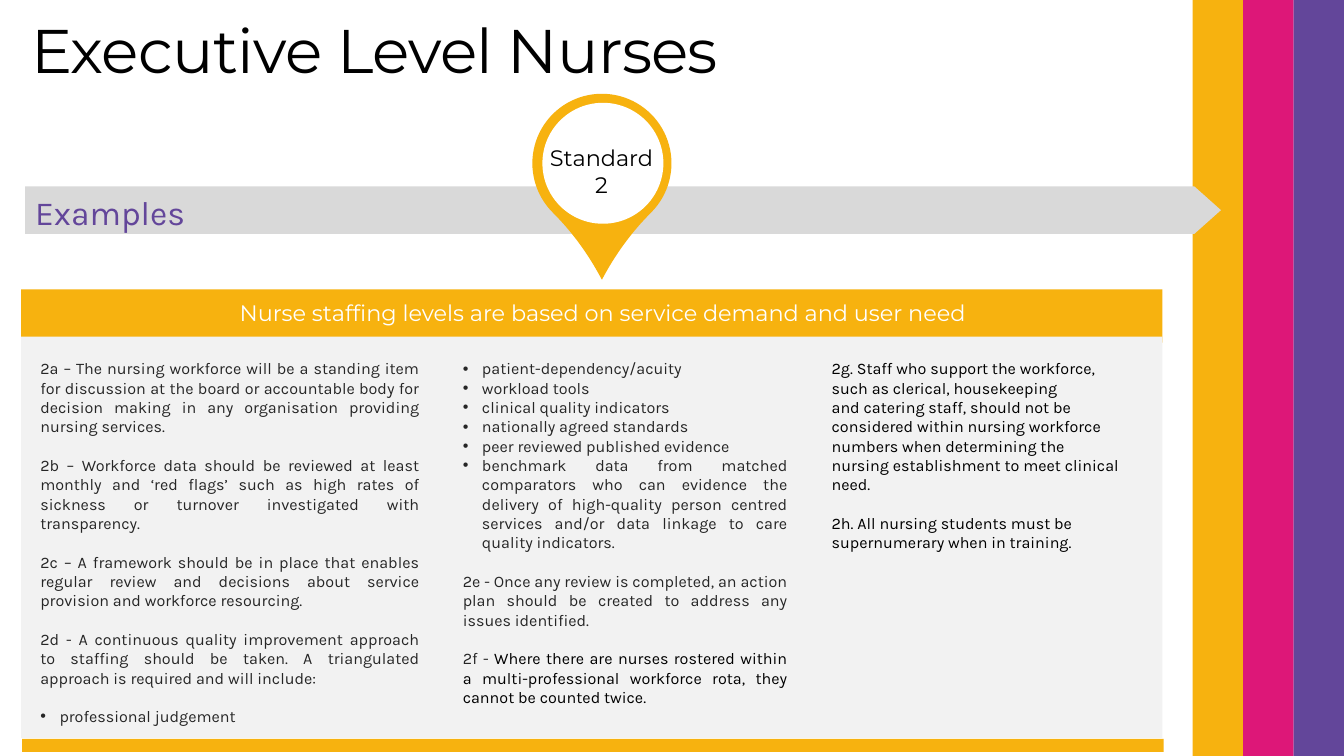
from pptx import Presentation
from pptx.dml.color import RGBColor
from pptx.enum.shapes import MSO_SHAPE as Preset
from pptx.enum.text import MSO_ANCHOR as Anchor, MSO_AUTO_SIZE as AutoSize, PP_ALIGN as Align
from pptx.oxml.ns import qn
from pptx.util import Inches, Pt
from lxml.etree import SubElement

COLORS = {
    "amber": "F7B20F", "pink": "DD1778", "purple": "63469A", "gray": "D9D9D9",
    "panel": "F2F2F2", "white": "FFFFFF", "black": "000000", "ink": "262626",
}
HEADING_FONT, BODY_FONT = "Montserrat", "Karla"
BODY_SIZE, BODY_GAP = 11.5, 13.8
BULLET = "• "

TITLE = "Executive Level Nurses"
SECTION = "Examples"
STANDARD = ["Standard", "2"]
BANNER = "Nurse staffing levels are based on service demand and user need"

REVIEWS = [
    "2a – The nursing workforce will be a standing item for discussion at the board or "
    "accountable body for decision making in any organisation providing nursing services.",
    "2b – Workforce data should be reviewed at least monthly and ‘red flags’ such as high "
    "rates of sickness or turnover investigated with transparency.",
    "2c – A framework should be in place that enables regular review and decisions about "
    "service provision and workforce resourcing.",
    "2d - A continuous quality improvement approach to staffing should be taken. "
    "A triangulated approach is required and will include:",
    "• professional judgement",
]
EVIDENCE = [
    "• patient-dependency/acuity",
    "• workload tools",
    "• clinical quality indicators",
    "• nationally agreed standards",
    "• peer reviewed published evidence",
    "• benchmark data from matched comparators who can evidence the delivery of high-quality "
    "person centred services and/or data linkage to care quality indicators.",
    "2e - Once any review is completed, an action plan should be created to address any "
    "issues identified.",
    ("2f - ", "Where there are nurses rostered within a multi-professional workforce rota, "
              "they cannot be counted twice."),
]
SUPPORT = [
    "2g. Staff who support the workforce,",
    "such as clerical, housekeeping",
    "and catering staff, should not be",
    "considered within nursing workforce",
    "numbers when determining the",
    "nursing establishment to meet clinical",
    "need.",
    "2h. All nursing students must be",
    "supernumerary when in training.",
]
COLUMNS = [
    (REVIEWS, 0.3, 3.96, 3.78, "ink"),
    (EVIDENCE, 4.49, 3.42, 3.58, "ink"),
    (SUPPORT, 8.15, 3.38, 2.04, "black"),
]
STRIPES = ["amber", "pink", "purple"]
STRIPE_WIDTH, STRIPE_LEFT, COLUMN_TOP = 0.5, 11.83, 3.51


def place(shape, left, top, width, height):
    shape.left, shape.top = Inches(left), Inches(top)
    shape.width, shape.height = Inches(width), Inches(height)


def add_block(preset, left, top, width, height, color):
    shape = slide.shapes.add_shape(
        preset, Inches(left), Inches(top), Inches(width), Inches(height))
    shape.shadow.inherit = False
    shape.fill.solid()
    shape.fill.fore_color.rgb = RGBColor.from_string(COLORS[color])
    shape.line.fill.background()
    return shape


def add_text_box(left, top, width, height):
    return slide.shapes.add_textbox(
        Inches(left), Inches(top), Inches(width), Inches(height))


def set_bullet(paragraph, bulleted):
    properties = paragraph._p.get_or_add_pPr()
    indent = Inches(0.19) if bulleted else 0
    properties.set("marL", str(indent))
    properties.set("indent", str(-indent))
    if bulleted:
        SubElement(properties, qn("a:buFont")).set("typeface", "Arial")
        SubElement(properties, qn("a:buChar")).set("char", BULLET.strip())
    else:
        SubElement(properties, qn("a:buNone"))


def write_text(shape, texts, size, font, color, accent="black", align=Align.LEFT,
               anchor=Anchor.TOP, wrap=True, gap=0, line_spacing=1.0, tracking=0):
    frame = shape.text_frame
    frame.word_wrap, frame.auto_size = wrap, AutoSize.NONE
    frame.vertical_anchor = anchor
    after_bullet = False
    for index, text in enumerate(texts):
        parts = (text,) if isinstance(text, str) else text
        bulleted = parts[0].startswith(BULLET)
        starts_item = parts[0].startswith("2") or (bulleted and not after_bullet)
        paragraph = frame.add_paragraph() if index else frame.paragraphs[0]
        paragraph.alignment, paragraph.line_spacing = align, line_spacing
        paragraph.space_before = Pt(gap if index and starts_item else 0)
        paragraph.space_after = Pt(0)
        set_bullet(paragraph, bulleted)
        for part, part_color in zip(parts, (color, accent)):
            run = paragraph.add_run()
            run.text = part.removeprefix(BULLET)
            run.font.size, run.font.name = Pt(size), font
            run.font.color.rgb = RGBColor.from_string(COLORS[part_color])
            if tracking:
                run.font._element.set("spc", str(int(tracking * 100)))
        after_bullet = bulleted


presentation = Presentation()
presentation.slide_width, presentation.slide_height = Inches(13.33), Inches(7.5)
slide = presentation.slides.add_slide(presentation.slide_layouts[3])
title, *bodies = slide.placeholders

for index, color in enumerate(STRIPES):
    add_block(Preset.RECTANGLE, STRIPE_LEFT + index * STRIPE_WIDTH, 0, STRIPE_WIDTH, 7.5, color)

arrow = add_block(Preset.RIGHT_ARROW, 0.25, 1.85, 11.86, 0.47, "gray")
arrow.adjustments[0], arrow.adjustments[1] = 1, 0.56
pin = add_block(Preset.TEAR, 5.28, 0.93, 1.38, 1.38, "amber")
pin.adjustments[0] = 1.184
pin.rotation = 135
add_block(Preset.OVAL, 5.38, 1.02, 1.2, 1.2, "white")

add_block(Preset.RECTANGLE, 0.21, 2.87, 11.32, 0.53, "amber")
add_block(Preset.RECTANGLE, 0.21, 3.34, 11.32, 3.98, "panel")
add_block(Preset.RECTANGLE, 0.22, 7.33, 11.32, 0.13, "amber")

place(title, 0.21, 0.02, 10.6, 0.89)
write_text(title, [TITLE], 44, HEADING_FONT, "black", anchor=Anchor.BOTTOM,
           line_spacing=0.9, tracking=-0.5)
write_text(add_text_box(5.34, 1.38, 1.25, 0.64), STANDARD, 16, HEADING_FONT, "black",
           align=Align.CENTER, anchor=Anchor.MIDDLE, wrap=False)
write_text(add_text_box(0.25, 1.85, 1.76, 0.5), [SECTION], 24, BODY_FONT, "purple", wrap=False)
write_text(add_text_box(0.73, 2.92, 10.5, 0.37), [BANNER], 16, HEADING_FONT, "white",
           align=Align.CENTER)

for index, (texts, left, width, height, color) in enumerate(COLUMNS):
    if index < len(bodies):
        column = bodies[index]
        place(column, left, COLUMN_TOP, width, height)
        column.element.getparent().append(column.element)
    else:
        column = add_text_box(left, COLUMN_TOP, width, height)
    write_text(column, texts, BODY_SIZE, BODY_FONT, color, align=Align.JUSTIFY, gap=BODY_GAP)

presentation.save("out.pptx")
